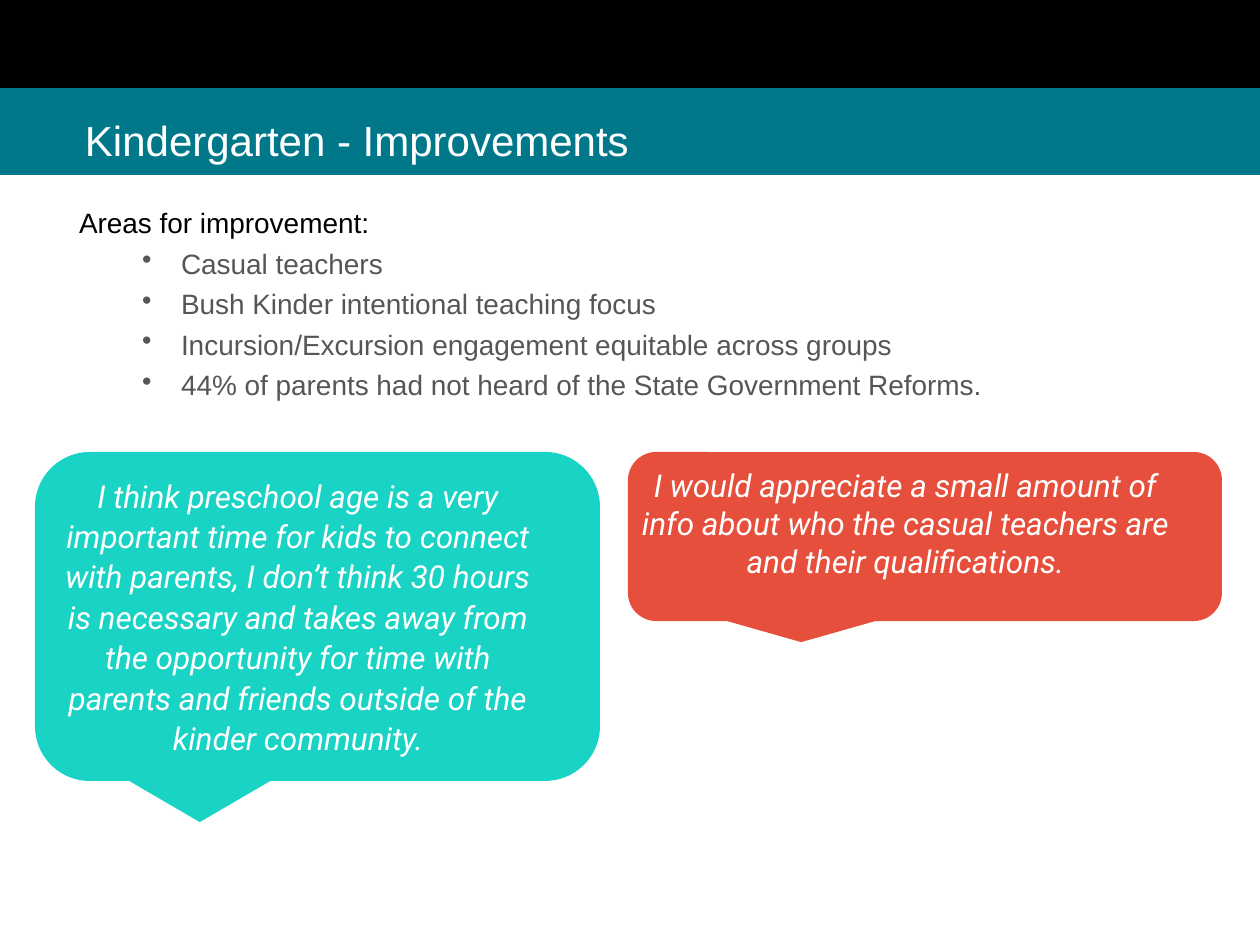
import pptx
import pptx.dml.color
import pptx.enum.shapes
import pptx.enum.text
import pptx.oxml.ns
import pptx.util
from lxml import etree

ALIGN = pptx.enum.text.PP_ALIGN
ANCHOR = pptx.enum.text.MSO_ANCHOR
SHAPE = pptx.enum.shapes.MSO_SHAPE
EMU_PER_PX = 914400 / 126
WHITE = "FFFFFF"
QUOTES = [
    ((35, 452, 565, 329), "19D3C5", 1.07, 8,
     "I think preschool age is a very important time for kids to connect with parents, "
     "I don’t think 30 hours is necessary and takes away from the opportunity for time "
     "with parents and friends outside of the kinder community."),
    ((628, 452, 594, 169), "E74F3D", 1.0, 0,
     "I would appreciate a small amount of info about who the casual teachers are "
     "and their qualifications."),
]
IMPROVEMENTS = [
    "Casual teachers",
    "Bush Kinder intentional teaching focus",
    "Incursion/Excursion engagement equitable across groups",
    "44% of parents had not heard of the State Government Reforms.",
]


def px(length):
    return pptx.util.Emu(round(length * EMU_PER_PX))


def color(value):
    return pptx.dml.color.RGBColor.from_string(value)


def add_block(slide, kind, box, fill):
    shape = slide.shapes.add_shape(kind, *map(px, box))
    shape.shadow.inherit = False
    shape.fill.solid()
    shape.fill.fore_color.rgb = color(fill)
    shape.line.fill.background()
    return shape


def set_frame(shape, anchor, margins=(0, 0, 0, 0)):
    frame = shape.text_frame
    frame.word_wrap = True
    frame.vertical_anchor = anchor
    (frame.margin_left, frame.margin_top,
     frame.margin_right, frame.margin_bottom) = map(px, margins)
    return frame


def add_run(paragraph, text, size, value, font="Arial", italic=False):
    run = paragraph.add_run()
    run.text = text
    run.font.size = pptx.util.Pt(size)
    run.font.name = font
    run.font.italic = italic
    run.font.color.rgb = color(value)


def add_bullet(paragraph):
    properties = paragraph._p.get_or_add_pPr()
    properties.set("marL", str(px(102)))
    properties.set("indent", str(px(-39)))
    bullet = etree.SubElement(properties, pptx.oxml.ns.qn("a:buChar"))
    bullet.set("char", "•")


def add_header(slide, box):
    left, top, width, height = box
    add_block(slide, SHAPE.RECTANGLE, box, "00788A")
    add_block(slide, SHAPE.RECTANGLE, (left, top, width, height // 2 + 1), "000000")
    title = slide.shapes.add_textbox(*map(px, (left + 85, top + 53, 1102, 112)))
    paragraph = set_frame(title, ANCHOR.BOTTOM).paragraphs[0]
    add_run(paragraph, "Kindergarten - Improvements", 24, WHITE)


def add_improvements(slide, box):
    frame = set_frame(slide.shapes.add_textbox(*map(px, box)), ANCHOR.TOP)
    add_run(frame.paragraphs[0], "Areas for improvement:", 16, "000000")
    for text in IMPROVEMENTS:
        paragraph = frame.add_paragraph()
        paragraph.level = 1
        add_bullet(paragraph)
        paragraph.space_before = pptx.util.Pt(3.9)
        add_run(paragraph, text, 16, "54565A")


def add_quote(slide, box, fill, line_spacing, space_after, text):
    callout = add_block(slide, SHAPE.ROUNDED_RECTANGULAR_CALLOUT, box, fill)
    paragraph = set_frame(callout, ANCHOR.TOP, (0, 6, 39, 6)).paragraphs[0]
    paragraph.alignment = ALIGN.CENTER
    paragraph.line_spacing = line_spacing
    paragraph.space_after = pptx.util.Pt(space_after)
    add_run(paragraph, text, 18, WHITE, "Roboto", True)


def main():
    presentation = pptx.Presentation()
    presentation.slide_width = px(1260)
    presentation.slide_height = px(945)
    slide = presentation.slides.add_slide(presentation.slide_layouts[6])
    add_header(slide, (0, 0, 1260, 175))
    add_improvements(slide, (79, 206, 1101, 208))
    for quote in QUOTES:
        add_quote(slide, *quote)
    presentation.save("out.pptx")


if __name__ == "__main__":
    main()
